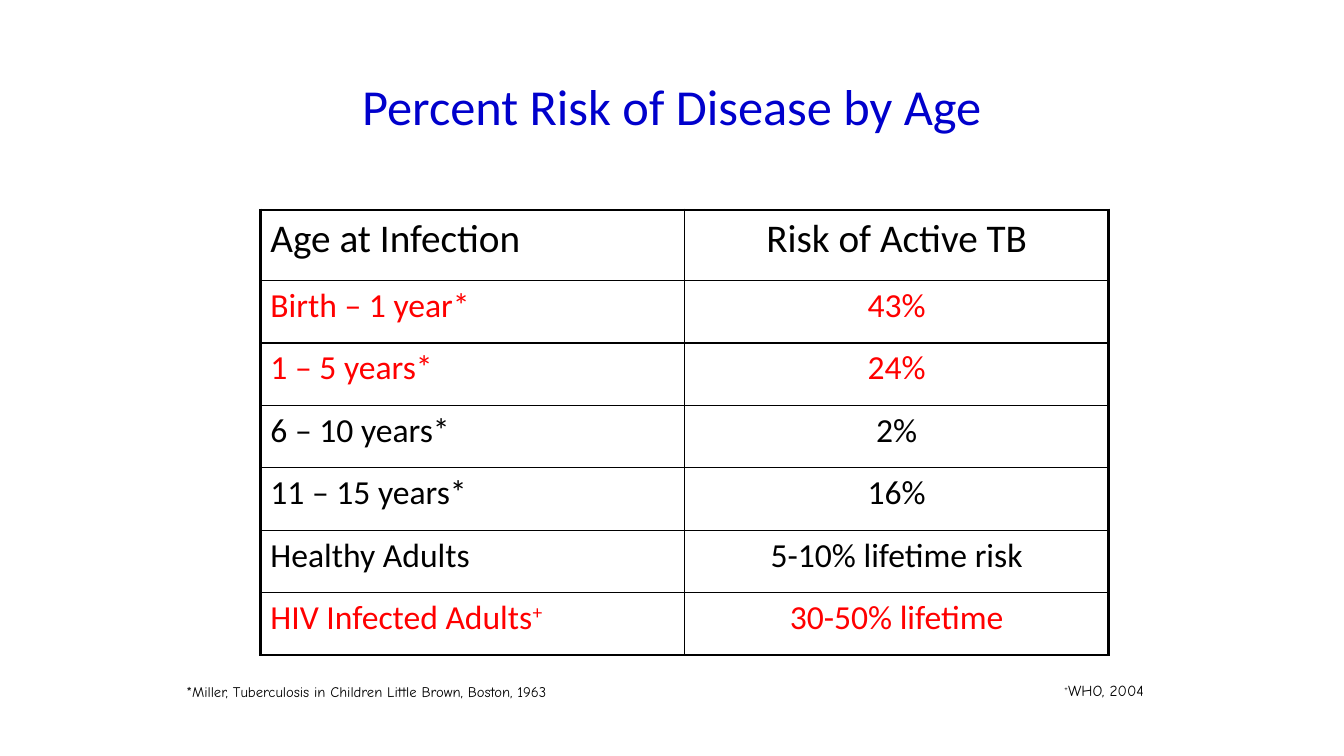
from lxml import etree
from pptx import Presentation
from pptx.dml.color import RGBColor
from pptx.enum.text import MSO_ANCHOR, MSO_AUTO_SIZE, PP_ALIGN
from pptx.oxml.ns import qn
from pptx.util import Pt

LEFT, CENTER = PP_ALIGN.LEFT, PP_ALIGN.CENTER
MIDDLE = MSO_ANCHOR.MIDDLE
NO_AUTOFIT = MSO_AUTO_SIZE.NONE
TITLE_ONLY_LAYOUT = 5

BLACK, RED, BLUE = "000000", "FF0000", "0000CC"
BODY_FONT, NOTE_FONT = "Calibri", "Comic Neue"
THIN, THICK = 1, 2.25
HEADER_HEIGHT = 50.4

RISK_ROWS = [
    ("Age at Infection", "", "Risk of Active TB", BLACK),
    ("Birth – 1 year*", "", "43%", RED),
    ("1 – 5 years*", "", "24%", RED),
    ("6 – 10 years*", "", "2%", BLACK),
    ("11 – 15 years*", "", "16%", BLACK),
    ("Healthy Adults", "", "5-10% lifetime risk", BLACK),
    ("HIV Infected Adults", "+", "30-50% lifetime", RED),
]


def color(hex_string):
    return RGBColor.from_string(hex_string)


def add_text(paragraph, text, *, size, font=BODY_FONT, fill=BLACK,
             align=LEFT, superscript=False):
    paragraph.alignment = align
    run = paragraph.add_run()
    run.text = text
    run.font.size = Pt(size)
    run.font.name = font
    run.font.color.rgb = color(fill)
    if superscript:
        run._r.get_or_add_rPr().set("baseline", "30000")


def set_border(cell, side, width):
    properties = cell._tc.get_or_add_tcPr()
    line = etree.SubElement(properties, qn(f"a:ln{side}"), w=str(Pt(width)))
    fill = etree.SubElement(line, qn("a:solidFill"))
    etree.SubElement(fill, qn("a:srgbClr"), val=BLACK)


def add_title(slide, left, top, width, height):
    title = slide.shapes.title
    title.left, title.top = Pt(left), Pt(top)
    title.width, title.height = Pt(width), Pt(height)
    frame = title.text_frame
    frame.auto_size = NO_AUTOFIT
    frame.vertical_anchor = MIDDLE
    add_text(frame.paragraphs[0], "Percent Risk of Disease by Age",
             size=36, fill=BLUE, align=CENTER)


def add_risk_table(slide, left, top, width, height):
    last_row = len(RISK_ROWS) - 1
    table = slide.shapes.add_table(len(RISK_ROWS), 2, Pt(left), Pt(top),
                                   Pt(width), Pt(height)).table
    table.first_row = table.horz_banding = False
    for column in table.columns:
        column.width = Pt(width / 2)
    for index, (age, mark, risk, fill) in enumerate(RISK_ROWS):
        is_header = index == 0
        table.rows[index].height = Pt(
            HEADER_HEIGHT if is_header else (height - HEADER_HEIGHT) / last_row)
        size = 28 if is_header else 24
        age_cell, risk_cell = table.cell(index, 0), table.cell(index, 1)
        age_paragraph = age_cell.text_frame.paragraphs[0]
        add_text(age_paragraph, age, size=size, fill=fill)
        if mark:
            add_text(age_paragraph, mark, size=size, fill=fill, superscript=True)
        add_text(risk_cell.text_frame.paragraphs[0], risk,
                 size=size, fill=fill, align=CENTER)
        for cell in (age_cell, risk_cell):
            set_border(cell, "L", THICK if cell is age_cell else THIN)
            set_border(cell, "R", THICK if cell is risk_cell else THIN)
            set_border(cell, "T", THICK if is_header else THIN)
            set_border(cell, "B", THICK if index == last_row else THIN)
            cell.fill.background()


def add_source_note(slide, left, top, width, height, *, text, size,
                    mark="", wrap=True):
    box = slide.shapes.add_textbox(Pt(left), Pt(top), Pt(width), Pt(height))
    frame = box.text_frame
    frame.word_wrap = wrap
    paragraph = frame.paragraphs[0]
    if mark:
        add_text(paragraph, mark, size=size, font=NOTE_FONT, superscript=True)
    add_text(paragraph, text, size=size, font=NOTE_FONT)


def main():
    presentation = Presentation()
    presentation.slide_width, presentation.slide_height = Pt(960), Pt(540)
    slide = presentation.slides.add_slide(
        presentation.slide_layouts[TITLE_ONLY_LAYOUT])
    add_title(slide, 174, 30, 612, 90)
    add_risk_table(slide, 186, 150, 606, 318)
    add_source_note(slide, 126, 484, 306, 20, size=10.5,
                    text="*Miller, Tuberculosis in Children Little Brown, Boston, 1963")
    add_source_note(slide, 753, 483, 81, 21, size=11, mark="+",
                    text="WHO, 2004", wrap=False)
    presentation.save("out.pptx")


if __name__ == "__main__":
    main()
